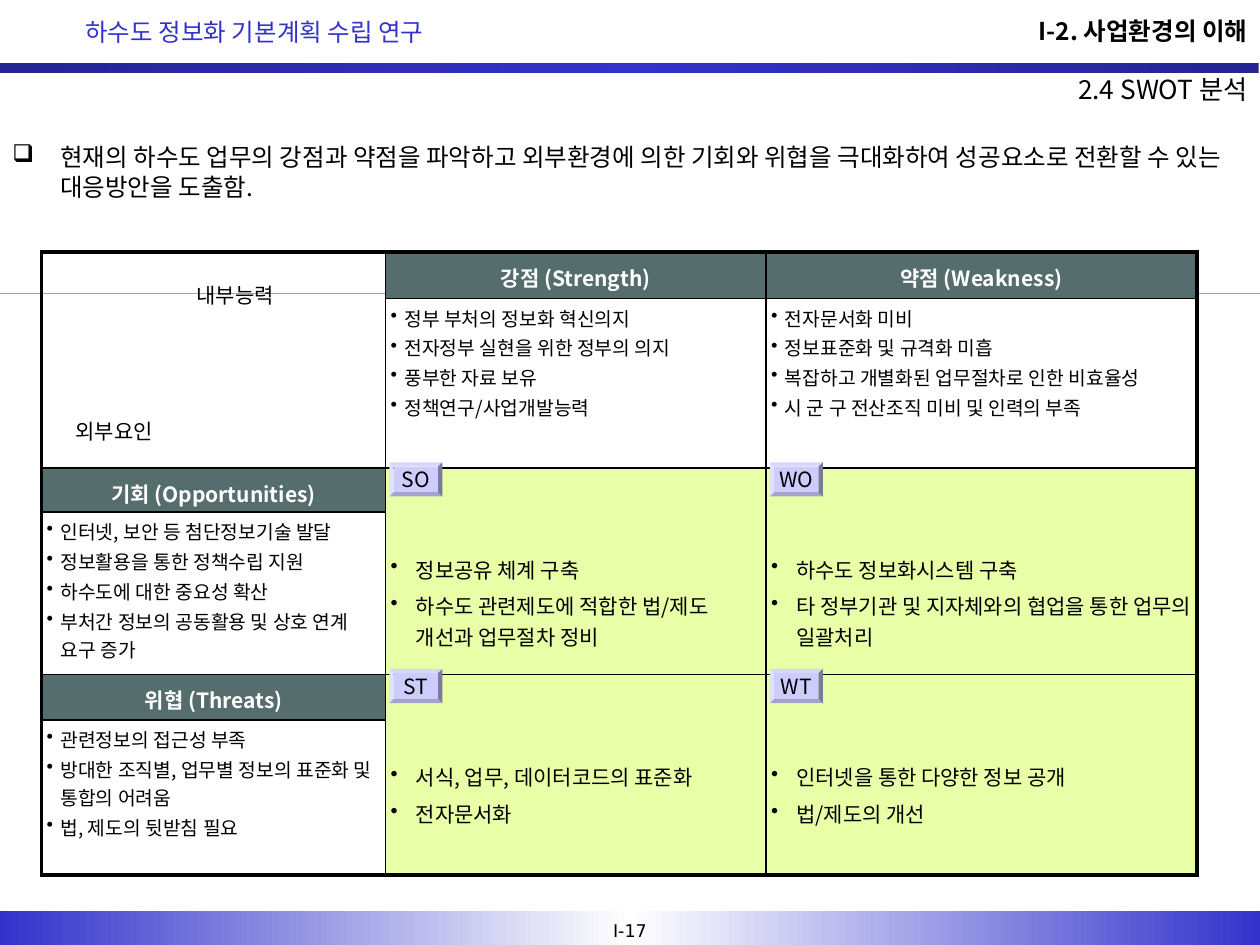
from copy import deepcopy
from lxml.etree import SubElement
from pptx import Presentation
from pptx.dml.color import RGBColor
from pptx.enum.dml import MSO_LINE
from pptx.enum.shapes import MSO_CONNECTOR as CONNECTOR, MSO_SHAPE as SHAPE
from pptx.enum.text import MSO_ANCHOR as ANCHOR, PP_ALIGN as ALIGN
from pptx.oxml.ns import qn
from pptx.util import Inches, Pt

KOREAN, LATIN = "Noto Sans CJK KR", "DejaVu Sans"
BLACK, WHITE, BLUE, NAVY = "000000", "FFFFFF", "3333CC", "242492"
SLATE, LIME, LILAC, GRAY = "556D6C", "E8FFA7", "CCCCFF", "A6A6A6"

BARS = [
    (-0.01, 0.5, 10, 0.08, (NAVY, BLUE, NAVY)),
    (0, 7.23, 10, 0.27, (BLUE, WHITE, BLUE)),
]
LABELS = [
    ("I-17", (4.72, 7.25, 0.56, 0.27), ALIGN.CENTER, ANCHOR.MIDDLE, False,
     dict(size=10, name=LATIN)),
    ("하수도 정보화 기본계획 수립 연구", (0.58, 0.07, 5, 0.36), ALIGN.LEFT, ANCHOR.MIDDLE, True,
     dict(size=14, color=BLUE)),
    ("I-2. 사업환경의 이해", (7.88, 0.08, 2.12, 0.33), ALIGN.RIGHT, ANCHOR.TOP, False,
     dict(size=14, bold=True)),
    ("2.4 SWOT 분석", (1.75, 0.5, 8.25, 0.42), ALIGN.RIGHT, ANCHOR.MIDDLE, True,
     dict(size=15)),
]
SUMMARY = ("현재의 하수도 업무의 강점과 약점을 파악하고 외부환경에 의한 기회와 위협을 "
           "극대화하여 성공요소로 전환할 수 있는 대응방안을 도출함.")

TABLE_LEFT, TABLE_TOP = 0.33, 2
COLUMNS = [2.73, 3.02, 3.42]
ROWS = [0.37, 1.26, 0.35, 1.29, 0.36, 1.23]
AXES = [("내부능력", 1.19, 0), ("외부요인", 0.23, 58)]
HEADINGS = {
    (0, 1): "강점 (Strength)",
    (0, 2): "약점 (Weakness)",
    (2, 0): "기회 (Opportunities)",
    (4, 0): "위협 (Threats)",
}
FACTORS = {
    (1, 1): ["정부 부처의 정보화 혁신의지", "전자정부 실현을 위한 정부의 의지",
             "풍부한 자료 보유", "정책연구/사업개발능력"],
    (1, 2): ["전자문서화 미비", "정보표준화 및 규격화 미흡",
             "복잡하고 개별화된 업무절차로 인한 비효율성", "시 군 구 전산조직 미비 및 인력의 부족"],
    (3, 0): ["인터넷, 보안 등 첨단정보기술 발달", "정보활용을 통한 정책수립 지원",
             "하수도에 대한 중요성 확산", "부처간 정보의 공동활용 및 상호 연계 요구 증가"],
    (5, 0): ["관련정보의 접근성 부족", "방대한 조직별, 업무별 정보의 표준화 및 통합의 어려움",
             "법, 제도의 뒷받침 필요"],
}
STRATEGIES = {
    (3, 1): ["정보공유 체계 구축", "하수도 관련제도에 적합한 법/제도 개선과 업무절차 정비"],
    (3, 2): ["하수도 정보화시스템 구축", "타 정부기관 및 지자체와의 협업을 통한 업무의 일괄처리"],
    (5, 1): ["서식, 업무, 데이터코드의 표준화", "전자문서화"],
    (5, 2): ["인터넷을 통한 다양한 정보 공개", "법/제도의 개선"],
}
BADGES = {(2, 1): "SO", (2, 2): "WO", (4, 1): "ST", (4, 2): "WT"}


def rgb(value):
    return RGBColor.from_string(value)


def style(para, size=12, color=BLACK, bold=False, name=KOREAN):
    for span in para.runs:
        font = span.font
        font.size, font.bold, font.name = Pt(size), bold, name
        font.color.rgb = rgb(color)
        SubElement(font._element, qn("a:ea")).set("typeface", name)


def indent(para, left, hanging=0, bullet=None):
    props = para._p.get_or_add_pPr()
    props.set("marL", str(Inches(left)))
    props.set("indent", str(-Inches(hanging)))
    if bullet:
        SubElement(props, qn("a:buChar")).set("char", bullet)


def add_plain_shape(page, kind, place, color):
    shape = page.shapes.add_shape(kind, *map(Inches, place))
    shape.shadow.inherit = False
    shape.fill.solid()
    shape.fill.fore_color.rgb = rgb(color)
    shape.line.fill.background()
    return shape


def add_bar(page, left, top, width, height, colors):
    bar = add_plain_shape(page, SHAPE.RECTANGLE, (left, top, width, height), colors[0])
    bar.fill.gradient()
    bar.fill.gradient_angle = 0
    stops = bar._element.spPr.find(qn("a:gradFill")).find(qn("a:gsLst"))
    stops.insert(1, deepcopy(stops[0]))
    for index, (stop, color) in enumerate(zip(bar.fill.gradient_stops, colors)):
        stop.position = index / 2
        stop.color.rgb = rgb(color)


def add_label(page, text, place, align, anchor, wrap, look):
    frame = page.shapes.add_textbox(*map(Inches, place)).text_frame
    frame.word_wrap, frame.vertical_anchor = wrap, anchor
    frame.text = text
    para = frame.paragraphs[0]
    para.alignment = align
    style(para, **look)
    return para


def set_borders(cell, widths):
    props = cell._tc.get_or_add_tcPr()
    for index, (side, width) in enumerate(zip(("lnL", "lnR", "lnT", "lnB"), widths)):
        line = SubElement(props, qn("a:" + side))
        props.remove(line)
        props.insert(index, line)
        line.set("w", str(Pt(width)))
        if width:
            fill = SubElement(line, qn("a:solidFill"))
            SubElement(fill, qn("a:srgbClr")).set("val", BLACK)
        else:
            SubElement(line, qn("a:noFill"))


def fill_list(cell, items, size, hanging, gap):
    cell.text_frame.text = "\n".join(items)
    for para in cell.text_frame.paragraphs:
        indent(para, hanging, hanging, "•")
        para.space_after = Pt(gap)
        style(para, size)


def fill_cell(cell, spot):
    row, column = spot
    strategy = row > 1 and column > 0
    cell.margin_left = cell.margin_right = cell.margin_top = cell.margin_bottom = Inches(0.04)
    if strategy or spot in HEADINGS:
        cell.fill.solid()
        cell.fill.fore_color.rgb = rgb(LIME if strategy else SLATE)
    else:
        cell.fill.background()
    set_borders(cell, (
        2.25 if column == 0 else 1,
        2.25 if column == len(COLUMNS) - 1 else 1,
        2.25 if row == 0 else 0 if strategy and row % 2 else 1,
        2.25 if row == len(ROWS) - 1 else 0 if strategy and row % 2 == 0 else 1,
    ))
    if spot in HEADINGS:
        cell.text_frame.text = HEADINGS[spot]
        cell.vertical_anchor = ANCHOR.MIDDLE
        para = cell.text_frame.paragraphs[0]
        para.alignment, para.line_spacing = ALIGN.CENTER, 1.15
        style(para, color=WHITE, bold=True)
    elif spot in FACTORS:
        fill_list(cell, FACTORS[spot], 11, 0.11, 1.1)
    elif spot in STRATEGIES:
        cell.margin_top = Inches(0.33)
        fill_list(cell, STRATEGIES[spot], 12, 0.2, 3.6)
    else:
        para = cell.text_frame.paragraphs[0]
        SubElement(para._p, qn("a:endParaRPr")).set("sz", "1200")


def add_matrix(page):
    frame = page.shapes.add_table(len(ROWS), len(COLUMNS), Inches(TABLE_LEFT), Inches(TABLE_TOP),
                                  Inches(sum(COLUMNS)), Inches(sum(ROWS)))
    table = frame.table
    table.first_row = table.horz_banding = False
    for column, width in zip(table.columns, COLUMNS):
        column.width = Inches(width)
    for row, height in zip(table.rows, ROWS):
        row.height = Inches(height)
    for row in range(len(ROWS)):
        for column in range(len(COLUMNS)):
            fill_cell(table.cell(row, column), (row, column))
    corner = table.cell(0, 0)
    corner.merge(table.cell(1, 0))
    corner.vertical_anchor = ANCHOR.MIDDLE
    corner.text_frame.text = "\n".join(text for text, _, _ in AXES)
    for para, (_, left, gap) in zip(corner.text_frame.paragraphs, AXES):
        indent(para, left)
        para.line_spacing = 1.15
        if gap:
            para.space_before = Pt(gap)
        style(para)


def add_badge(page, spot, text):
    row, column = spot
    left = TABLE_LEFT + sum(COLUMNS[:column]) + 0.03
    top = TABLE_TOP + sum(ROWS[:row]) + 0.04
    badge = add_plain_shape(page, SHAPE.BEVEL, (left, top, 0.42, 0.27), LILAC)
    frame = badge.text_frame
    frame.margin_left = frame.margin_right = Inches(0.02)
    frame.margin_top = frame.margin_bottom = 0
    frame.word_wrap, frame.vertical_anchor = False, ANCHOR.MIDDLE
    frame.text = text
    frame.paragraphs[0].alignment = ALIGN.CENTER
    style(frame.paragraphs[0])


def main():
    deck = Presentation()
    deck.slide_width, deck.slide_height = Inches(10), Inches(7.5)
    page = deck.slides.add_slide(deck.slide_layouts[6])
    for bar in BARS:
        add_bar(page, *bar)
    guide = page.shapes.add_connector(CONNECTOR.STRAIGHT, 0, Inches(2.33), Inches(10), Inches(2.33))
    guide.line.color.rgb = rgb(GRAY)
    guide.line.width, guide.line.dash_style = Pt(0.25), MSO_LINE.ROUND_DOT
    SubElement(guide._element.spPr, qn("a:effectLst"))
    for label in LABELS:
        add_label(page, *label)
    add_matrix(page)
    for spot, text in BADGES.items():
        add_badge(page, spot, text)
    summary = add_label(page, SUMMARY, (0, 1.08, 10, 0.64), ALIGN.LEFT, ANCHOR.TOP, True, dict(size=14))
    indent(summary, 0.38, 0.38, "❑")
    deck.save("out.pptx")


if __name__ == "__main__":
    main()
